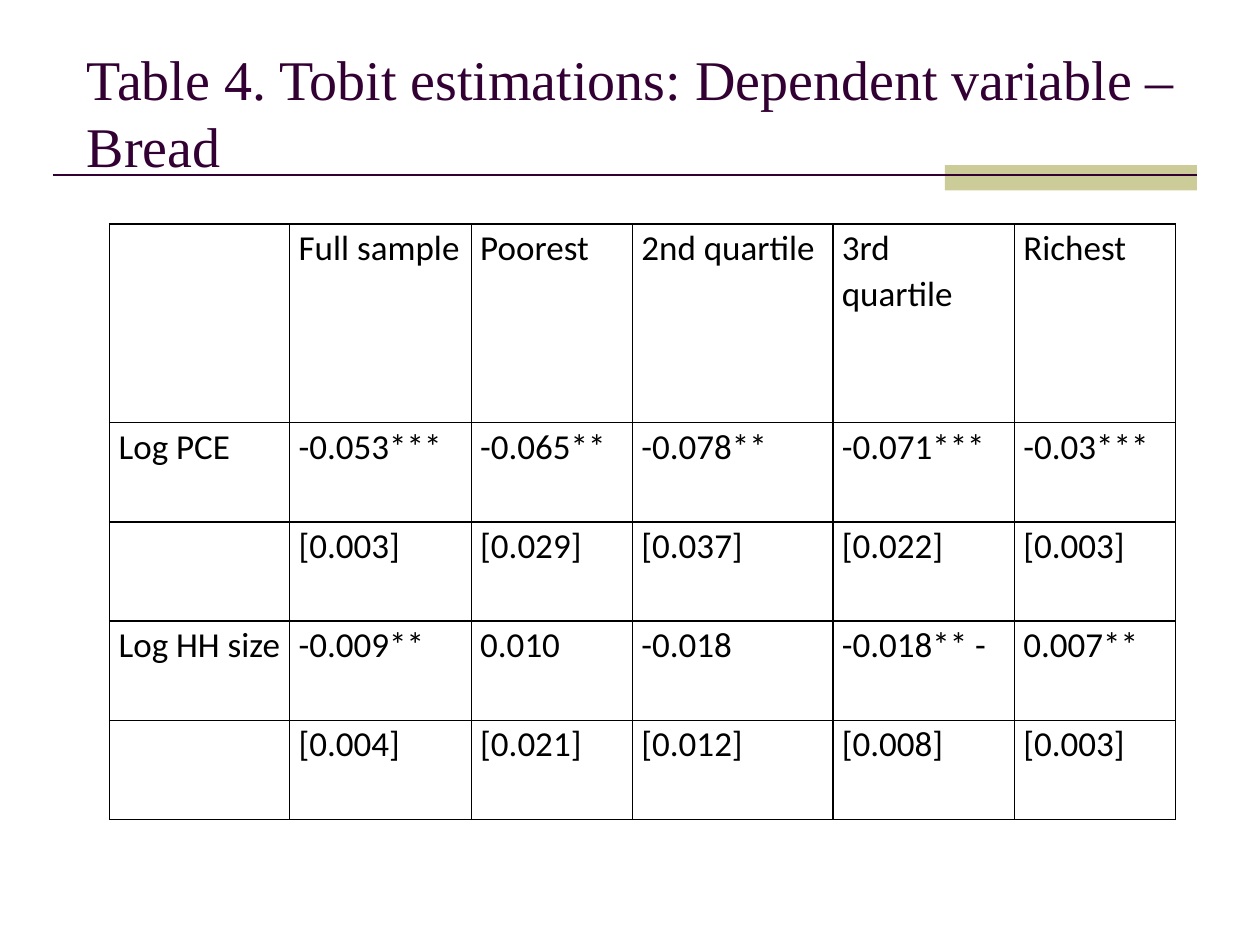
from lxml import etree
from pptx import Presentation
from pptx import util as u
from pptx.dml import color
from pptx.enum import shapes, text
from pptx.oxml import ns

PLUM, KHAKI, BLACK = "330033", "CCCC99", "000000"


def paint(target, hex_color):
    """Give a fill, line fill or font fill one solid colour."""
    target.solid()
    target.fore_color.rgb = color.RGBColor.from_string(hex_color)


def write(frame, words, font_format, hex_color, spacing):
    para = frame.paragraphs[0]
    para.line_spacing = spacing
    span = para.add_run()
    span.text = words
    for name, value in font_format.items():
        setattr(span.font, name, value)
    paint(span.font.fill, hex_color)


deck = Presentation()
deck.slide_width, deck.slide_height = u.Cm(25.4), u.Cm(19.05)
page = deck.slides.add_slide(deck.slide_layouts[6])

# Accent bar and rule under the title
bar = page.shapes.add_shape(shapes.MSO_SHAPE.RECTANGLE,
                            u.Cm(19.05), u.Cm(3.33), u.Cm(5.08), u.Cm(0.51))
bar.shadow.inherit = False
paint(bar.fill, KHAKI)
bar.line.fill.background()

rule = page.shapes.add_connector(shapes.MSO_CONNECTOR.STRAIGHT,
                                 u.Cm(1.06), u.Cm(3.53), u.Cm(24.13), u.Cm(3.53))
paint(rule.line.fill, PLUM)
rule.line.width = u.Pt(1.5)
etree.SubElement(rule.element.spPr, ns.qn("a:effectLst"))

# Title
title = page.shapes.add_textbox(u.Cm(1.5), u.Cm(0.33), u.Cm(22.63), u.Cm(3.4))
frame_format = {"word_wrap": True, "vertical_anchor": text.MSO_ANCHOR.BOTTOM}
for name, value in frame_format.items():
    setattr(title.text_frame, name, value)
write(title.text_frame, "Table 4. Tobit estimations: Dependent variable – Bread",
      {"name": "Times New Roman", "size": u.Pt(32)}, PLUM, 1.0)

# Table of estimates, standard errors in brackets
rows = [
    ["", "Full sample", "Poorest", "2nd quartile", "3rd quartile", "Richest"],
    ["Log PCE", "-0.053***", "-0.065**", "-0.078**", "-0.071***", "-0.03***"],
    ["", "[0.003]", "[0.029]", "[0.037]", "[0.022]", "[0.003]"],
    ["Log HH size", "-0.009**", "0.010", "-0.018", "-0.018** -", "0.007**"],
    ["", "[0.004]", "[0.021]", "[0.012]", "[0.008]", "[0.003]"],
]
widths = [3.63, 3.66, 3.25, 4.04, 3.66, 3.25]
heights = [4] + [2] * 4
table = page.shapes.add_table(len(rows), len(widths), u.Cm(2.21), u.Cm(4.52),
                              u.Cm(sum(widths)), u.Cm(sum(heights))).table
for column, width in zip(table.columns, widths):
    column.width = u.Cm(width)
for row, height in zip(table.rows, heights):
    row.height = u.Cm(height)

cell_format = {"margin_left": u.Cm(0.18), "margin_right": u.Cm(0.18),
               "margin_top": 0, "margin_bottom": 0}
for r, row in enumerate(rows):
    for c, words in enumerate(row):
        cell = table.cell(r, c)
        for name, value in cell_format.items():
            setattr(cell, name, value)
        cell.fill.background()
        if words:
            write(cell.text_frame, words,
                  {"name": "Calibri", "size": u.Pt(20)}, BLACK, 1.07)

        # Black 1 pt borders, placed ahead of the fill
        properties = cell._tc.get_or_add_tcPr()
        for place, side in enumerate(["lnL", "lnR", "lnT", "lnB"]):
            border = etree.Element(ns.qn("a:" + side), w=str(u.Pt(1)))
            solid = etree.SubElement(border, ns.qn("a:solidFill"))
            etree.SubElement(solid, ns.qn("a:srgbClr"), val=BLACK)
            properties.insert(place, border)

deck.save("out.pptx")
